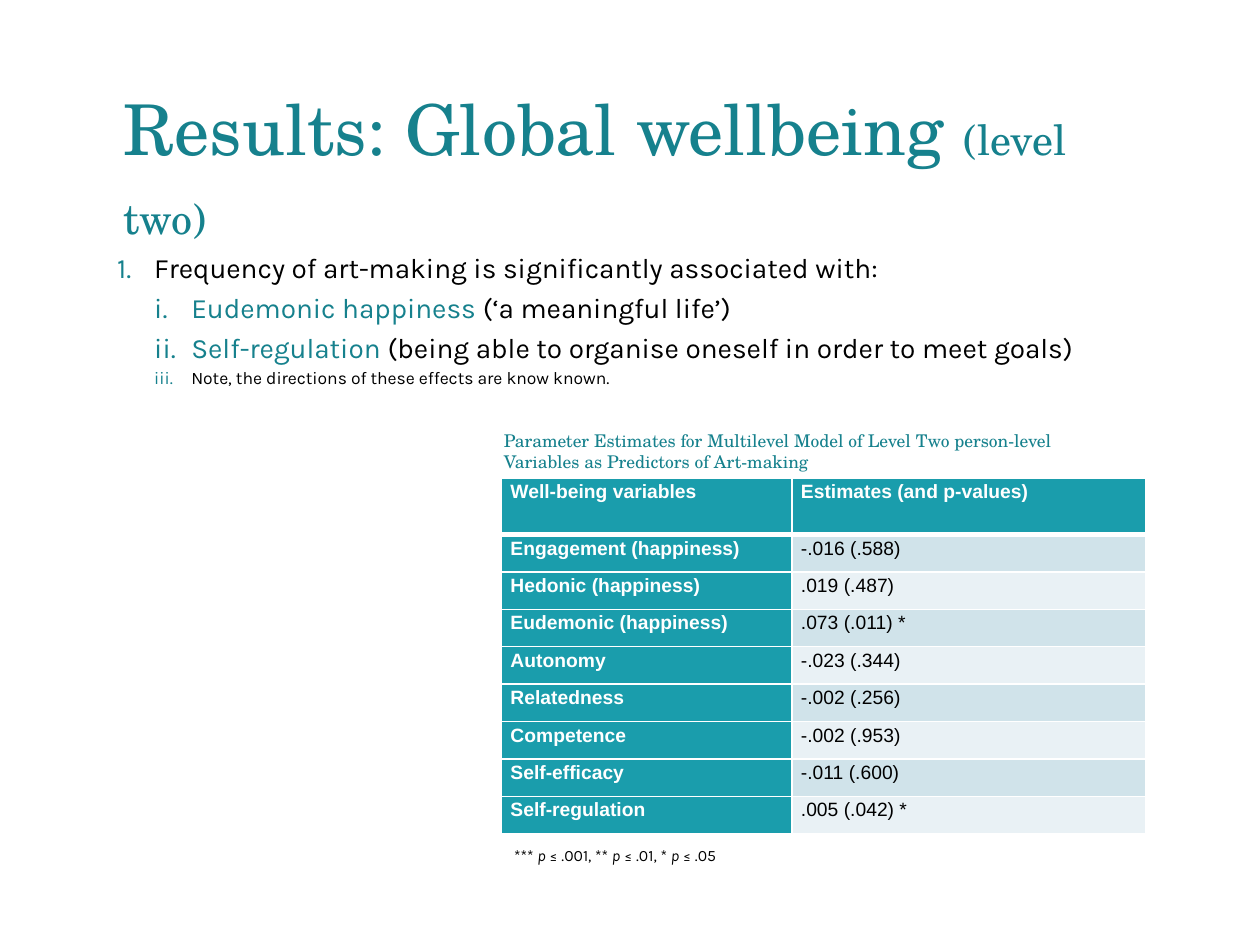
from lxml.etree import SubElement
from pptx import Presentation
from pptx.dml.color import RGBColor
from pptx.enum.text import MSO_AUTO_SIZE as AutoSize
from pptx.oxml.ns import qn
from pptx.util import Pt

TEAL, HEADER_TEAL, BLACK, WHITE = "16818D", "1A9DAC", "000000", "FFFFFF"
BANDS = ["D0E3EA", "E9F1F5"]
SERIF, SANS = "TeX Gyre Schola", "Karla"


def rgb(color):
    return RGBColor.from_string(color)


def add_run(paragraph, text, name, size, color, bold=False, italic=False):
    run = paragraph.add_run()
    run.text = text
    font = run.font
    font.name, font.size, font.bold, font.italic = name, Pt(size), bold, italic
    font.color.rgb = rgb(color)


presentation = Presentation()
presentation.slide_width, presentation.slide_height = Pt(720), Pt(540)
slide = presentation.slides.add_slide(presentation.slide_layouts[6])
shapes = slide.shapes

# Title
title = shapes.add_textbox(Pt(70.6), Pt(54.7), Pt(584), Pt(49.7)).text_frame
title.word_wrap = True
title.margin_left = title.margin_top = title.margin_right = title.margin_bottom = 0
paragraph = title.paragraphs[0]
paragraph.line_spacing = Pt(42)
add_run(paragraph, "Results: Global wellbeing ", SERIF, 40, TEAL)
add_run(paragraph, "(level two)", SERIF, 24, TEAL)

# Numbered findings: level, size, space before, teal lead, black text
findings = [
    (0, 16, 0, "", "Frequency of art-making is significantly associated with:"),
    (1, 16, 3.5, "Eudemonic happiness ", "(‘a meaningful life’)"),
    (1, 16, 3.5, "Self-regulation ",
     "(being able to organise oneself in order to meet goals)"),
    (1, 10, 2, "", "Note, the directions of these effects are know known."),
]
body = shapes.add_textbox(Pt(59.8), Pt(139.7), Pt(646.6), Pt(301)).text_frame
body.word_wrap = True
for index, (level, size, space, lead, text) in enumerate(findings):
    paragraph = body.add_paragraph() if index else body.paragraphs[0]
    paragraph.level = level
    paragraph.space_before = Pt(space)
    properties = paragraph._p.get_or_add_pPr()
    properties.set("marL", str(Pt(21.2 * (level + 1))))
    properties.set("indent", str(Pt(-21.2)))
    bullet_color = SubElement(properties, qn("a:buClr"))
    SubElement(bullet_color, qn("a:srgbClr"), val=TEAL)
    SubElement(properties, qn("a:buAutoNum"),
               type="romanLcPeriod" if level else "arabicPeriod")
    if lead:
        add_run(paragraph, lead, SANS, size, TEAL)
    add_run(paragraph, text, SANS, size, BLACK)

# Estimates table
rows = [
    ("Well-being variables", "Estimates (and p-values)"),
    ("Engagement (happiness)", "-.016 (.588)"),
    ("Hedonic (happiness)", ".019 (.487)"),
    ("Eudemonic (happiness)", ".073 (.011) *"),
    ("Autonomy", "-.023 (.344)"),
    ("Relatedness", "-.002 (.256)"),
    ("Competence", "-.002 (.953)"),
    ("Self-efficacy", "-.011 (.600)"),
    ("Self-regulation", ".005 (.042) *"),
]
table = shapes.add_table(len(rows), 2, Pt(286.7), Pt(273),
                         Pt(368.2), Pt(203.6)).table
table.columns[0].width, table.columns[1].width = Pt(166), Pt(202.2)
for row_index, row in enumerate(rows):
    table.rows[row_index].height = Pt(21.4 if row_index else 32.4)
    for column_index, text in enumerate(row):
        cell = table.cell(row_index, column_index)
        is_heading = row_index == 0 or column_index == 0
        cell.margin_left = cell.margin_right = Pt(5)
        cell.margin_top = cell.margin_bottom = 0
        paragraph = cell.text_frame.paragraphs[0]
        paragraph.line_spacing = 1.15
        add_run(paragraph, text, "Arial", 11,
                WHITE if is_heading else BLACK, bold=is_heading)
        cell_properties = cell._tc.get_or_add_tcPr()
        for side in ("L", "R", "T", "B"):
            under_header = (row_index, side) in [(0, "B"), (1, "T")]
            border = SubElement(cell_properties, qn("a:ln" + side),
                                w=str(Pt(3 if under_header else 1)))
            border_fill = SubElement(border, qn("a:solidFill"))
            SubElement(border_fill, qn("a:srgbClr"), val=WHITE)
        cell.fill.solid()
        cell.fill.fore_color.rgb = rgb(
            HEADER_TEAL if is_heading else BANDS[(row_index - 1) % 2])

# Significance note
note = shapes.add_textbox(Pt(286.7), Pt(479.5), Pt(159), Pt(40.3)).text_frame
note.word_wrap = False
note.auto_size = AutoSize.SHAPE_TO_FIT_TEXT
for text in ["*** ", "p", " ≤ .001, ** ", "p", " ≤ .01, * ", "p", " ≤ .05"]:
    add_run(note.paragraphs[0], text, SANS, 9, BLACK, italic=text == "p")

# Table caption
caption = shapes.add_textbox(Pt(280.8), Pt(242), Pt(368.6), Pt(31.7)).text_frame
caption.word_wrap = True
caption.auto_size = AutoSize.SHAPE_TO_FIT_TEXT
add_run(caption.paragraphs[0],
        "Parameter Estimates for Multilevel Model of Level Two person-level "
        "Variables as Predictors of Art-making", SERIF, 10, TEAL)

presentation.save("out.pptx")
